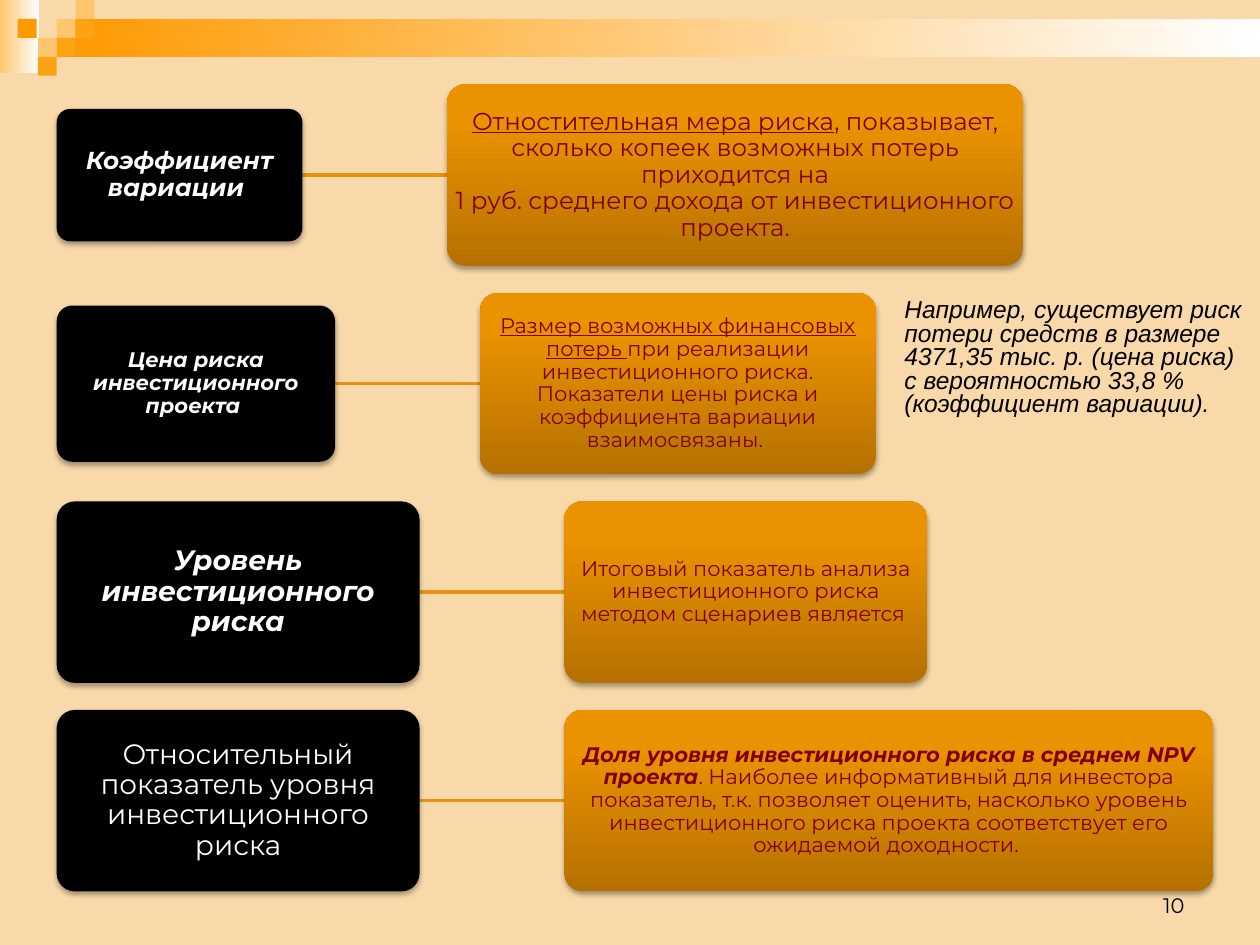
from lxml import etree
from pptx import Presentation
from pptx.dml.color import RGBColor
from pptx.enum import shapes, text
from pptx.oxml.ns import qn
from pptx.util import Inches, Pt


def rgb(value):
    return RGBColor.from_string(value)


def paint(shape, stops, angle=0):
    shape.line.fill.background()
    shape.shadow.inherit = False
    if len(stops) == 1:
        shape.fill.solid()
        shape.fill.fore_color.rgb = rgb(stops[0][1])
        return
    shape.fill.gradient()
    shape.fill.gradient_angle = angle
    stop_list = shape._element.spPr.find(qn("a:gradFill")).find(qn("a:gsLst"))
    for old_stop in list(stop_list):
        stop_list.remove(old_stop)
    for position, value in stops:
        stop = etree.SubElement(stop_list, qn("a:gs"), pos=str(position * 1000))
        etree.SubElement(stop, qn("a:srgbClr"), val=value)


prs = Presentation()
prs.slide_width, prs.slide_height = Inches(10), Inches(7.5)
slide = prs.slides.add_slide(prs.slide_layouts[6])
slide.background.fill.solid()
slide.background.fill.fore_color.rgb = rgb("F9D9A9")

banner = [
    (0, 0, 0.31, 0.58, [(0, "FCC66E"), (100, "FFFFFF")]),
    (0.45, 0.15, 9.55, 0.3, [(0, "FF9900"), (100, "FFFFFF")]),
]
mosaic = [
    (0.45, 0.15, "FCC66E"), (0.6, 0, "FCC66E"), (0.6, 0.15, "FBA313"),
    (0.3, 0.3, "FCC66E"), (0.14, 0.15, "FF9900"), (0.45, 0.3, "FBA313"),
    (0.3, 0.45, "FBA313"),
]
banner += [(x, y, 0.15, 0.15, [(0, color)]) for x, y, color in mosaic]
for x, y, width, height, stops in banner:
    tile = slide.shapes.add_shape(
        shapes.MSO_SHAPE.RECTANGLE, Inches(x), Inches(y), Inches(width), Inches(height))
    paint(tile, stops)

BLACK = [(0, "000000")]
AMBER = [(0, "B57100"), (80, "EB9200"), (100, "ED9300")]
LEFT, GAP, ROW_HEIGHT, ROW_STEP = 0.45, 1.15, 1.44, 1.655

rows = [
    (1.95, 1.05, 14, [[("Коэффициент вариации ", "bi")]],
     4.57, 14, [[("Отностительная мера риска", "u"),
                 (", показывает, сколько копеек возможных потерь приходится на", "")],
                [("1 руб. среднего дохода от инвестиционного проекта.", "")]]),
    (2.21, 1.24, 12, [[("Цена риска инвестиционного проекта ", "bi")]],
     3.14, 12, [[("Размер возможных финансовых потерь ", "u"),
                 ("при реализации инвестиционного риска. Показатели цены риска и "
                  "коэффициента вариации взаимосвязаны. ", "")]]),
    (2.88, 1.44, 16, [[("Уровень инвестиционного риска", "bi")]],
     2.88, 12, [[("Итоговый показатель анализа инвестиционного риска "
                  "методом сценариев является ", "")]]),
    (2.88, 1.44, 16, [[("Относительный показатель уровня инвестиционного риска", "")]],
     5.15, 12, [[("Доля уровня инвестиционного риска в среднем NPV проекта", "bi"),
                 (". Наиболее информативный для инвестора показатель, т.к. позволяет "
                  "оценить, насколько уровень инвестиционного риска проекта "
                  "соответствует его ожидаемой доходности. ", "")]]),
]

for index, (term_width, term_height, term_size, term,
            meaning_width, meaning_size, meaning) in enumerate(rows):
    middle = 0.67 + ROW_HEIGHT / 2 + index * ROW_STEP
    term_right = LEFT + term_width
    meaning_left = term_right + GAP

    link = slide.shapes.add_connector(
        shapes.MSO_CONNECTOR.STRAIGHT, Inches(term_right), Inches(middle),
        Inches(meaning_left), Inches(middle))
    link.line.color.rgb = rgb("E39310")
    link.line.width = Pt(2)
    etree.SubElement(link._element.spPr, qn("a:effectLst"))

    for x, width, height, stops, size, color, paragraphs in (
            (LEFT, term_width, term_height, BLACK, term_size, "FFFFFF", term),
            (meaning_left, meaning_width, ROW_HEIGHT, AMBER, meaning_size, "800000", meaning)):
        card = slide.shapes.add_shape(
            shapes.MSO_SHAPE.ROUNDED_RECTANGLE, Inches(x), Inches(middle - height / 2),
            Inches(width), Inches(height))
        card.adjustments[0] = 0.1
        paint(card, stops, 90)
        shadow = etree.SubElement(
            card._element.spPr.find(qn("a:effectLst")), qn("a:outerShdw"),
            blurRad=str(Pt(3.1)), dist=str(Pt(1.8)), dir="5400000", rotWithShape="0")
        shade = etree.SubElement(shadow, qn("a:srgbClr"), val="000000")
        etree.SubElement(shade, qn("a:alpha"), val="35000")

        frame = card.text_frame
        frame.word_wrap = True
        frame.vertical_anchor = text.MSO_ANCHOR.MIDDLE
        frame.margin_left = frame.margin_right = Inches(0.01)
        frame.margin_top = frame.margin_bottom = Inches(0.01)
        for number, runs in enumerate(paragraphs):
            paragraph = frame.add_paragraph() if number else frame.paragraphs[0]
            paragraph.alignment = text.PP_ALIGN.CENTER
            paragraph.line_spacing = 0.9
            paragraph.font.name = "Montserrat"
            paragraph.font.size = Pt(size)
            paragraph.font.color.rgb = rgb(color)
            for words, style in runs:
                run = paragraph.add_run()
                run.text = words
                if "b" in style:
                    run.font.bold = run.font.italic = True
                if "u" in style:
                    run.font.underline = True

page_number = slide.shapes.add_textbox(Inches(7.17), Inches(6.83), Inches(2.33), Inches(0.5))
page_number.text_frame.word_wrap = True
page_number.text_frame.vertical_anchor = text.MSO_ANCHOR.BOTTOM
number_line = page_number.text_frame.paragraphs[0]
number_line.text = "10"
number_line.alignment = text.PP_ALIGN.RIGHT
number_line.font.name = "Montserrat"
number_line.font.size = Pt(12)
number_line.font.color.rgb = rgb("000000")

example = slide.shapes.add_textbox(Inches(7.08), Inches(2.33), Inches(2.92), Inches(1.04))
example.text_frame.word_wrap = True
example_line = example.text_frame.paragraphs[0]
example_line.text = ("Например, существует риск потери средств в размере 4371,35 тыс. р. "
                     "(цена риска) с вероятностью 33,8 % (коэффициент вариации).")
example_line.line_spacing = 0.8
example_line.font.name = "Arial"
example_line.font.size = Pt(14)
example_line.font.italic = True
example_line.font.color.rgb = rgb("000000")

prs.save("out.pptx")
